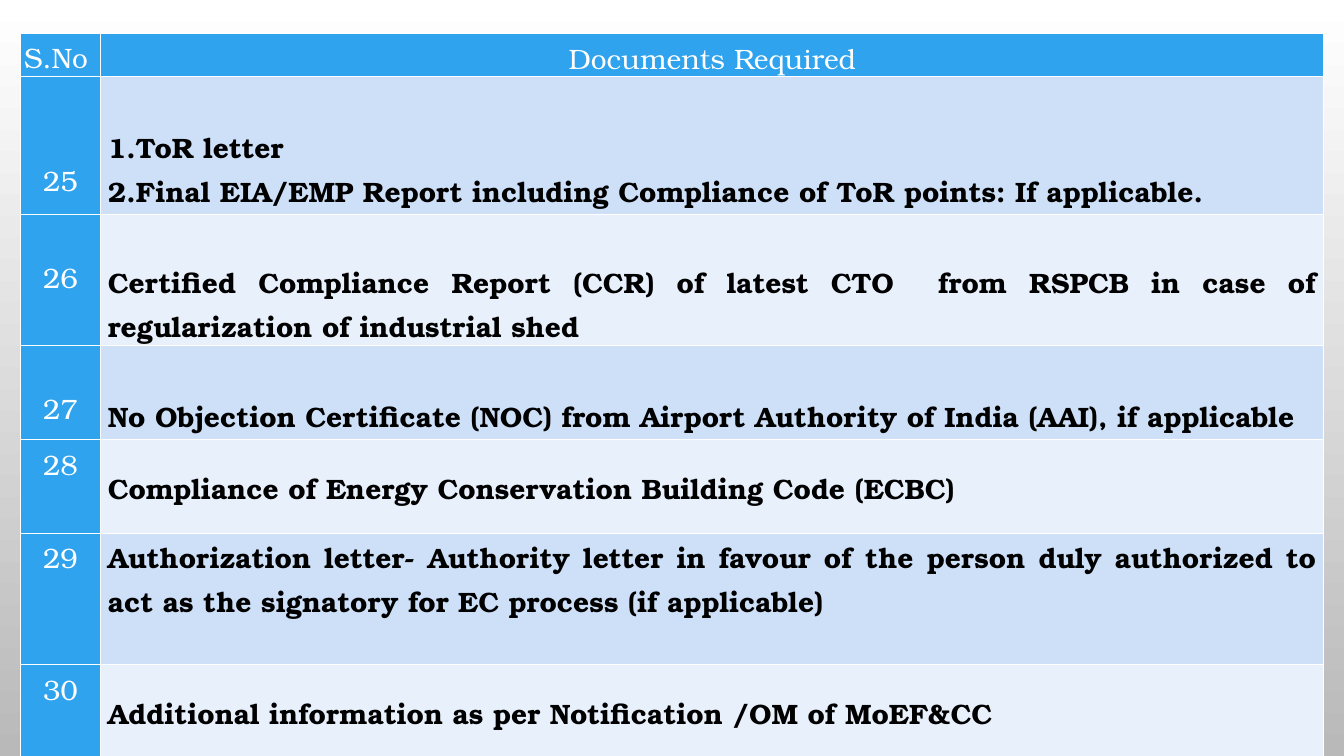
from lxml import etree
from pptx import Presentation
from pptx.dml.color import RGBColor
from pptx.enum.text import MSO_ANCHOR, PP_ALIGN
from pptx.oxml import parse_xml
from pptx.oxml.ns import nsdecls, qn
from pptx.util import Inches, Pt

WHITE = RGBColor(0xFF, 0xFF, 0xFF)
BLACK = RGBColor(0x00, 0x00, 0x00)
GREY = RGBColor(0xB9, 0xB9, 0xB9)
BLUE = RGBColor(0x2F, 0xA3, 0xEE)
PALE_BLUE = RGBColor(0xCD, 0xE0, 0xF8)
PALEST_BLUE = RGBColor(0xE8, 0xF0, 0xFC)
FONT = "TeX Gyre Bonum"

# Row height, number, documents, number top, documents top and bottom margins
ROWS = [
    (1.37, "25", ["ToR letter ",
                  "Final EIA/EMP Report including Compliance of ToR points: "
                  "If applicable."], 0.79, 0.43, 0),
    (1.28, "26", ["Certified Compliance Report (CCR) of latest CTO  from RSPCB "
                  "in case of regularization of industrial shed "], 0.38, 0.43, 0),
    (0.93, "27", ["No Objection Certificate (NOC) from Airport Authority of "
                  "India (AAI), if applicable"], 0.38, 0.43, 0),
    (0.93, "28", ["Compliance of Energy Conservation Building Code (ECBC)"], 0, 0, 0),
    (1.3, "29", ["Authorization letter- Authority letter in favour of the person "
                 "duly authorized to act as the signatory for EC process "
                 "(if applicable)"], 0, 0, 0.43),
    (0.93, "30", ["Additional information as per Notification /OM of MoEF&CC "], 0, 0, 0),
]


def style_cell(cell, fill, side, top=0, bottom=0, anchor=MSO_ANCHOR.TOP):
    """Set the margins, anchor, white borders and fill of a cell."""
    cell.margin_left = cell.margin_right = Inches(side)
    cell.margin_top = Inches(top)
    cell.margin_bottom = Inches(bottom)
    cell.vertical_anchor = anchor
    properties = cell._tc.get_or_add_tcPr()
    for edge in ("lnL", "lnR", "lnT", "lnB"):
        properties.append(parse_xml(
            f'<a:{edge} {nsdecls("a")} w="12700"><a:solidFill>'
            f'<a:srgbClr val="{WHITE}"/></a:solidFill></a:{edge}>'))
    cell.fill.solid()
    cell.fill.fore_color.rgb = fill


def write_cell(cell, lines, color, align, spacing, bold=False):
    """Write one paragraph per line, numbered when there are several."""
    for index, line in enumerate(lines):
        frame = cell.text_frame
        para = frame.add_paragraph() if index else frame.paragraphs[0]
        para.alignment = align
        para.line_spacing = spacing
        if len(lines) > 1:
            properties = para._p.get_or_add_pPr()
            properties.set("marL", "0")
            properties.set("indent", "0")
            etree.SubElement(properties, qn("a:buAutoNum"), type="arabicPeriod")
        span = para.add_run()
        span.text = line
        span.font.name = FONT
        span.font.size = Pt(20)
        span.font.bold = bold
        span.font.color.rgb = color


deck = Presentation()
deck.slide_width = Inches(13.33)
deck.slide_height = Inches(7.5)
page = deck.slides.add_slide(deck.slide_layouts[6])

backdrop = page.background.fill
backdrop.gradient()
backdrop.gradient_angle = 270
for stop, color, position in zip(backdrop.gradient_stops, (WHITE, GREY), (0, 1)):
    stop.color.rgb = color
    stop.position = position

table = page.shapes.add_table(len(ROWS) + 1, 2, Inches(0.2), Inches(0.33),
                              Inches(12.93), Inches(7.17)).table
table.first_row = False
table.horz_banding = False
table.columns[0].width = Inches(0.8)
table.columns[1].width = Inches(12.13)

table.rows[0].height = Inches(0.43)
headings = [("S.No", PP_ALIGN.LEFT, MSO_ANCHOR.TOP),
            ("Documents Required", PP_ALIGN.CENTER, MSO_ANCHOR.MIDDLE)]
for column, (heading, align, anchor) in enumerate(headings):
    cell = table.cell(0, column)
    style_cell(cell, BLUE, 0.04, anchor=anchor)
    write_cell(cell, [heading], WHITE, align, 1.15)

for row, (height, number, documents, number_top, top, bottom) in enumerate(ROWS, 1):
    table.rows[row].height = Inches(height)
    number_cell, documents_cell = table.cell(row, 0), table.cell(row, 1)
    style_cell(number_cell, BLUE, 0.04, number_top)
    write_cell(number_cell, [number], WHITE, PP_ALIGN.CENTER, 1.15)
    band = PALE_BLUE if row % 2 else PALEST_BLUE
    style_cell(documents_cell, band, 0.07, top, bottom, MSO_ANCHOR.MIDDLE)
    write_cell(documents_cell, documents, BLACK, PP_ALIGN.JUSTIFY, 1.07, bold=True)

deck.save("out.pptx")
